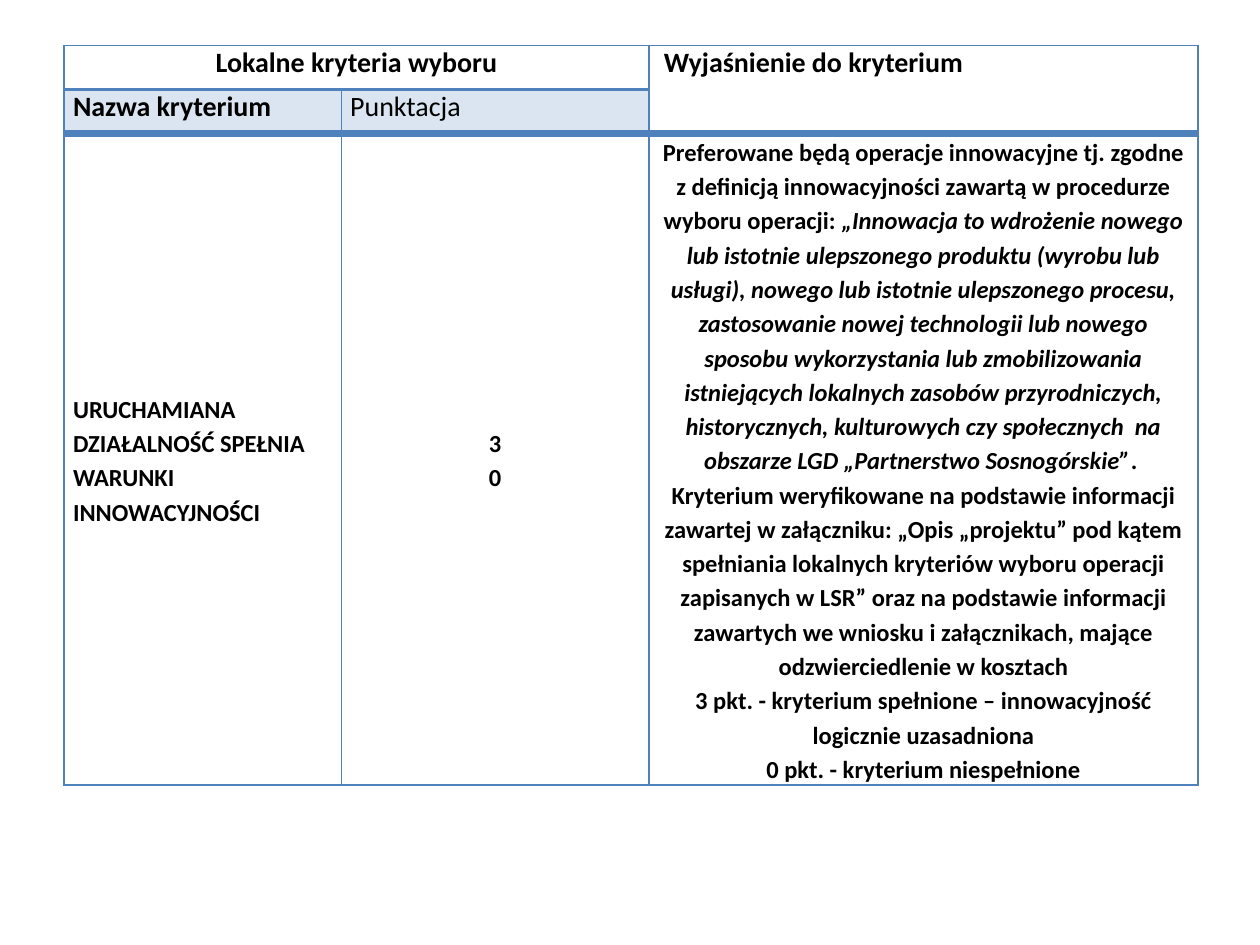
import pptx
import pptx.util
import pptx.dml.color
from dataclasses import dataclass
from lxml import etree
from pptx.enum.text import MSO_ANCHOR, PP_ALIGN
from pptx.oxml.ns import qn
from pptx.util import Inches, Pt


@dataclass(frozen=True)
class Theme:
    font: str = "Calibri"
    ink: str = "000000"
    line: str = "4F81BD"
    tint: int = 20
    head: int = 16
    body: int = 14
    thin: int = 1
    mid: int = 2
    thick: int = 4


THEME = Theme()
COLS = (2.2, 2.44, 4.36)
ROWS = (0.35, 0.35, 5.09)

INTRO = ("Preferowane będą operacje innowacyjne tj. zgodne z definicją innowacyjności "
         "zawartą w procedurze wyboru operacji: ")
QUOTE = ("„Innowacja to wdrożenie nowego lub istotnie ulepszonego produktu (wyrobu lub usługi), "
         "nowego lub istotnie ulepszonego procesu, zastosowanie nowej technologii lub nowego "
         "sposobu wykorzystania lub zmobilizowania istniejących lokalnych zasobów "
         "przyrodniczych, historycznych, kulturowych czy społecznych  na obszarze LGD "
         "„Partnerstwo Sosnogórskie”")
CHECK = ("Kryterium weryfikowane na podstawie informacji zawartej w załączniku: „Opis "
         "„projektu” pod kątem spełniania lokalnych kryteriów wyboru operacji zapisanych w LSR” "
         "oraz na podstawie informacji zawartych we wniosku i załącznikach, mające "
         "odzwierciedlenie w kosztach")
RULES = (". ", CHECK, "3 pkt. - kryterium spełnione – innowacyjność logicznie uzasadniona",
         "0 pkt. - kryterium niespełnione")


def edge(cell, **widths):
    """Draw cell borders; widths are points keyed by side L, R, T, B."""
    props = cell._tc.get_or_add_tcPr()
    for side, width in widths.items():
        line = etree.SubElement(props, qn(f"a:ln{side}"), w=str(Pt(width)))
        fill = etree.SubElement(line, qn("a:solidFill"))
        etree.SubElement(fill, qn("a:srgbClr"), val=THEME.line)


def shade(cell):
    cell.fill.solid()
    cell.fill.fore_color.rgb = pptx.dml.color.RGBColor.from_string(THEME.line)
    color = cell._tc.tcPr.find(qn("a:solidFill")).find(qn("a:srgbClr"))
    etree.SubElement(color, qn("a:alpha"), val=str(THEME.tint * 1000))


def add_run(para, text, size, bold=True, italic=False):
    run = para.add_run()
    run.text = text
    look = {"name": THEME.font, "size": Pt(size), "bold": bold, "italic": italic}
    for key, value in look.items():
        setattr(run.font, key, value)
    run.font.color.rgb = pptx.dml.color.RGBColor.from_string(THEME.ink)


def write(cell, lines, size, align=PP_ALIGN.LEFT, space=None, bold=True):
    """Write one paragraph per line and return the last one."""
    for index, text in enumerate(lines):
        frame = cell.text_frame
        para = frame.add_paragraph() if index else frame.paragraphs[0]
        para.alignment, para.line_spacing = align, space
        add_run(para, text, size, bold)
    return para


def fill_head(table):
    size = THEME.head
    write(table.cell(0, 0), ["Lokalne kryteria wyboru"], size, PP_ALIGN.CENTER)
    write(table.cell(0, 2), [" Wyjaśnienie do kryterium"], size)
    write(table.cell(1, 0), ["Nazwa kryterium"], size)
    write(table.cell(1, 1), ["Punktacja"], size, bold=False)
    for col in (0, 1):
        shade(table.cell(1, col))


def fill_body(table):
    size, mid, space = THEME.body, PP_ALIGN.CENTER, 1.15
    name, score, note = (table.cell(2, col) for col in range(3))
    write(name, ["URUCHAMIANA DZIAŁALNOŚĆ SPEŁNIA WARUNKI INNOWACYJNOŚCI"], size, space=space)
    write(score, ["3", "0"], size, mid, space)
    para = write(note, [INTRO], size, mid, space)
    add_run(para, QUOTE, size, italic=True)
    for index, text in enumerate(RULES):
        if index:
            para.add_line_break()
        add_run(para, text, size)
    for cell in (name, score, note):
        cell.vertical_anchor = MSO_ANCHOR.MIDDLE


def add_grid(slide, left, top, width, height):
    table = slide.shapes.add_table(len(ROWS), len(COLS), left, top, width, height).table
    table.first_row = table.horz_banding = False
    for col, size in zip(table.columns, COLS):
        col.width = Inches(size)
    for row, size in zip(table.rows, ROWS):
        row.height = Inches(size)
    pads = {"margin_left": 0.07, "margin_right": 0.07, "margin_top": 0, "margin_bottom": 0}
    rules = (THEME.thin, THEME.mid, THEME.thick, THEME.thin)
    for row in range(len(ROWS)):
        for col in range(len(COLS)):
            cell = table.cell(row, col)
            for key, value in pads.items():
                setattr(cell, key, Inches(value))
            tall = col == 2 and row < 2
            edge(cell, L=THEME.thin, R=THEME.thin,
                 T=rules[0] if tall else rules[row],
                 B=rules[2] if tall else rules[row + 1])
            cell.fill.background()
    table.cell(0, 0).merge(table.cell(0, 1))
    table.cell(0, 2).merge(table.cell(1, 2))
    fill_head(table)
    fill_body(table)


def main():
    deck = pptx.Presentation()
    deck.slide_width, deck.slide_height = Inches(10), Inches(7.5)
    slide = deck.slides.add_slide(deck.slide_layouts[6])
    add_grid(slide, Inches(0.51), Inches(0.36), Inches(sum(COLS)), Inches(sum(ROWS)))
    deck.save("out.pptx")


if __name__ == "__main__":
    main()
